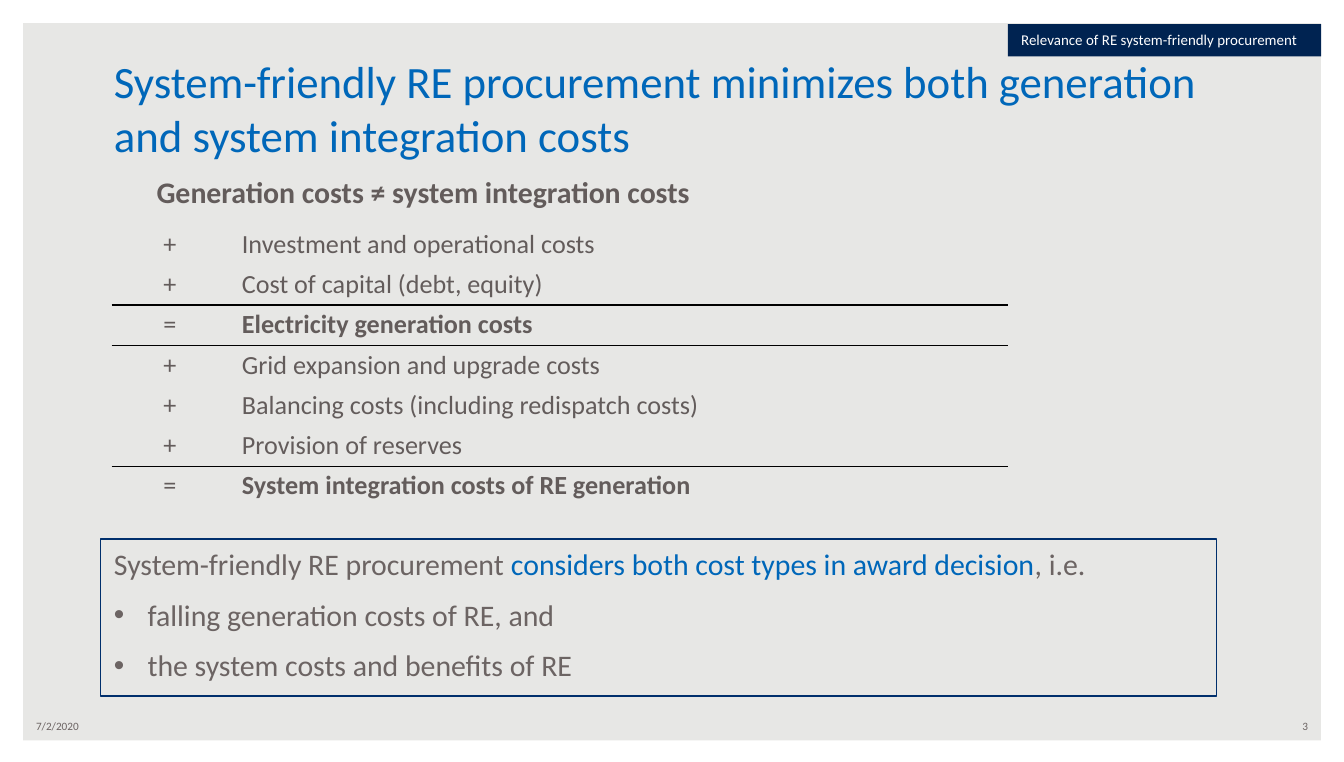
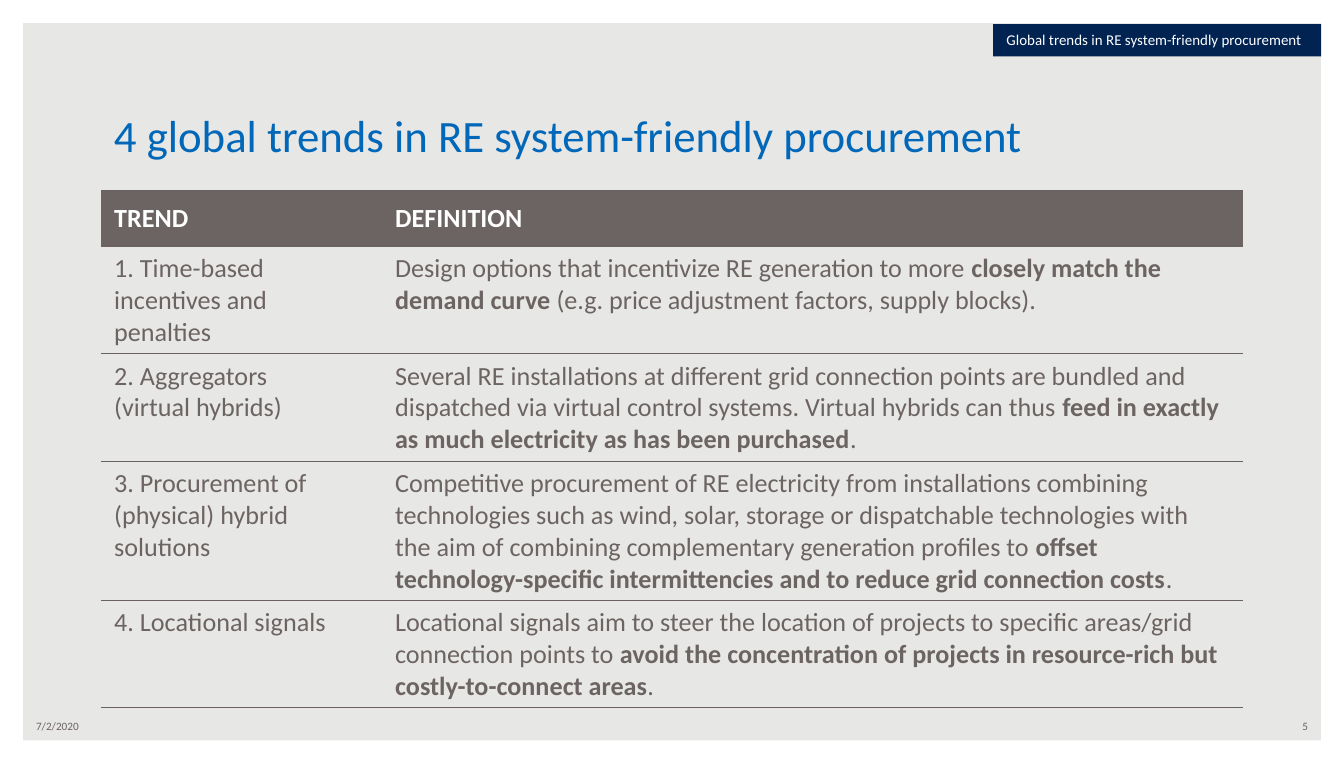
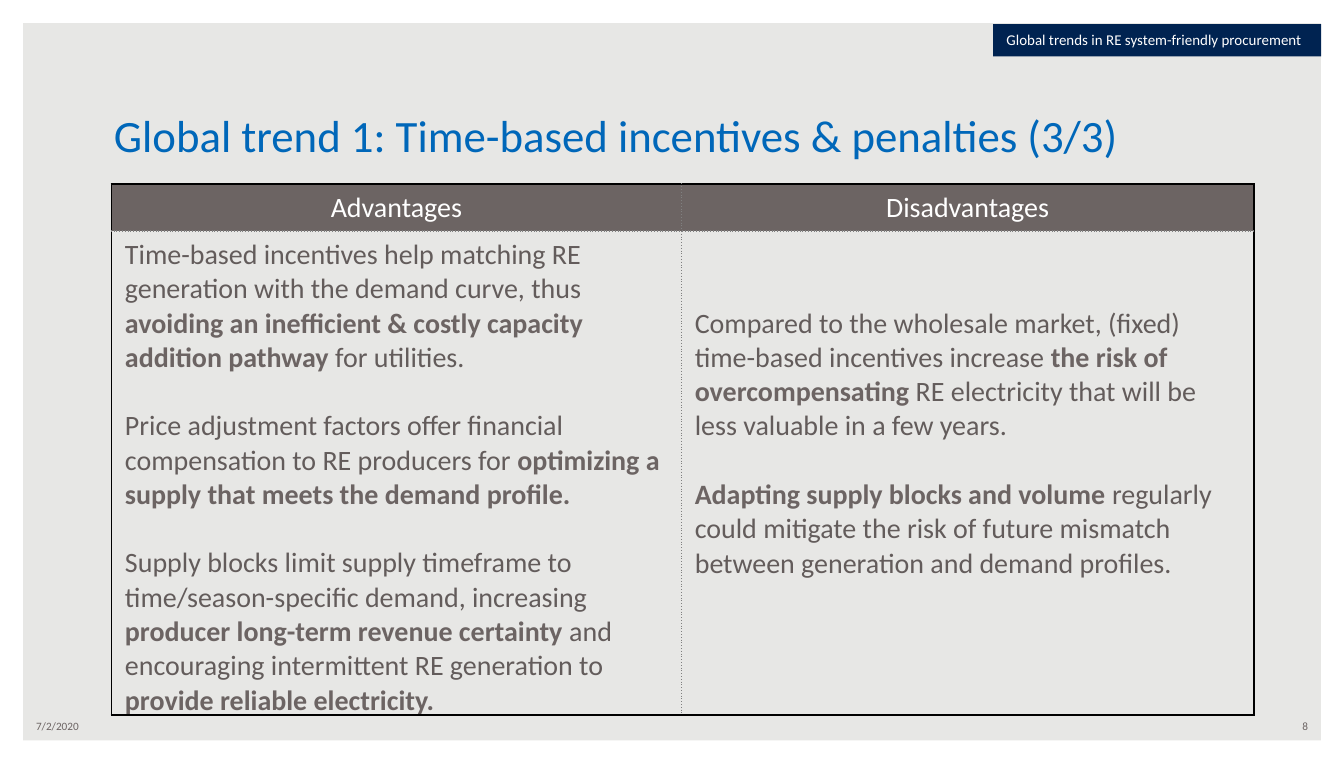
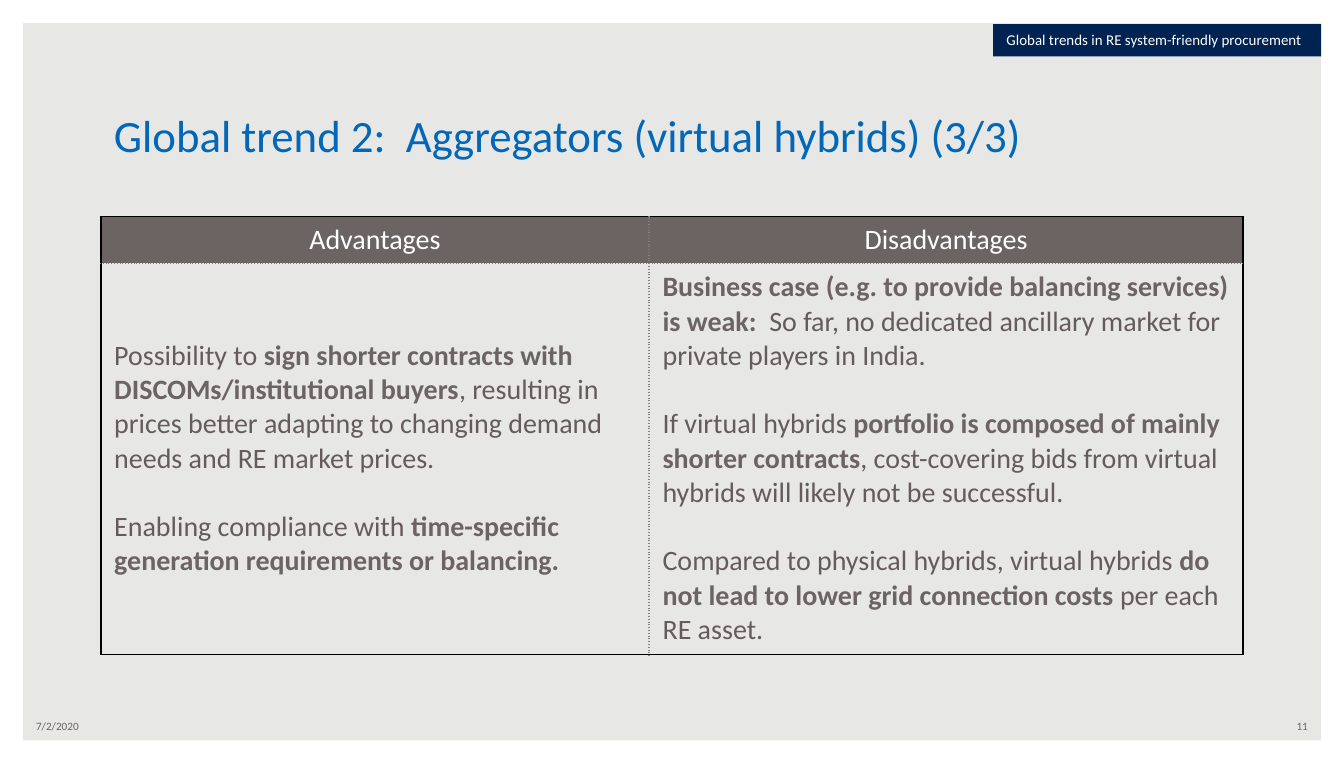
from lxml import etree
from pptx import Presentation
from pptx.dml.color import RGBColor
from pptx.enum import shapes, text
from pptx.oxml.ns import qn
from pptx.util import Inches, Pt

FONT = "Calibri"
PAPER = RGBColor(0xE7, 0xE7, 0xE5)
WHITE = RGBColor(0xFF, 0xFF, 0xFF)
BLACK = RGBColor(0, 0, 0)
BLUE = RGBColor(0x00, 0x67, 0xB9)
NAVY = RGBColor(0x00, 0x23, 0x51)
OUTLINE = RGBColor(0x00, 0x2F, 0x6C)
GREY = RGBColor(0x6C, 0x64, 0x63)
DARK = RGBColor(0x63, 0x5C, 0x5B)
RULE = RGBColor(0x6A, 0x62, 0x61)
DOTS = RGBColor(0x80, 0x80, 0x80)
NO_STYLE = "{2D5ABB26-0587-4C30-8999-92F81FD0307C}"
LEFT, CENTER, RIGHT = text.PP_ALIGN.LEFT, text.PP_ALIGN.CENTER, text.PP_ALIGN.RIGHT
TOP, MIDDLE, BOTTOM = text.MSO_ANCHOR.TOP, text.MSO_ANCHOR.MIDDLE, text.MSO_ANCHOR.BOTTOM

DATE = "7/2/2020"
RELEVANCE = ("Relevance of RE system-friendly procurement", 2.33)
TRENDS = ("Global trends in RE system-friendly procurement", 2.44)

COSTS_TITLE = "System-friendly RE procurement minimizes both generation and system integration costs"
COSTS_HEADING = "**Generation costs ≠ system integration costs**"
COSTS = [
    ("+", "Investment and operational costs"),
    ("+", "Cost of capital (debt, equity)"),
    ("=", "**Electricity generation costs**"),
    ("+", "Grid expansion and upgrade costs"),
    ("+", "Balancing costs (including redispatch costs)"),
    ("+", "Provision of reserves"),
    ("=", "**System integration costs of RE generation**"),
]
AWARD = "System-friendly RE procurement **considers both cost types in award decision**, i.e."
AWARD_POINTS = ["falling generation costs of RE, and", "the system costs and benefits of RE"]

DEFINITIONS_TITLE = "4 global trends in RE system-friendly procurement"
DEFINITIONS = [
    ("**TREND**", "**DEFINITION**"),
    ("1. Time-based incentives and penalties",
     "Design options that incentivize RE generation to more **closely match the demand curve "
     "**(e.g. price adjustment factors, supply blocks)."),
    ("2. Aggregators \n(virtual hybrids)",
     "Several RE installations at different grid connection points are bundled and dispatched "
     "via virtual control systems. Virtual hybrids can thus **feed in exactly as much "
     "electricity as has been purchased**."),
    ("3. Procurement of (physical) hybrid solutions",
     "Competitive procurement of RE electricity from installations combining technologies such "
     "as wind, solar, storage or dispatchable technologies with the aim of combining "
     "complementary generation profiles to **offset technology-specific intermittencies and to "
     "reduce grid connection costs**."),
    ("4. Locational signals",
     "Locational signals aim to steer the location of projects to specific areas/grid "
     "connection points to **avoid the concentration of projects in resource-rich but "
     "costly-to-connect areas**."),
]
DEFINITION_ROWS = [0.41, 0.8, 0.8, 1.03, 0.8]

PROS_CONS_HEADERS = ("Advantages", "Disadvantages")
PROS_CONS = [
    dict(number=8, title="Global trend 1: Time-based incentives & penalties (3/3)",
         left=0.83, top=1.37, cols=[4.24, 4.26], rows=[0.35, 3.6], inset_tops=[0.05, 0.56],
         lists=[
             ["Time-based incentives help matching RE generation with the demand curve, thus "
              "**avoiding an inefficient & costly capacity addition pathway **for utilities.",
              "Price adjustment factors offer financial compensation to RE producers for "
              "**optimizing a supply that meets the demand profile.**",
              "Supply blocks limit supply timeframe to time/season-specific demand, increasing "
              "**producer long-term revenue certainty **and encouraging intermittent RE "
              "generation to **provide reliable electricity.**"],
             ["Compared to the wholesale market, (fixed) time-based incentives increase **the "
              "risk of overcompensating **RE electricity that will be less valuable in a few "
              "years.",
              "**Adapting supply blocks and volume **regularly could mitigate the risk of future "
              "mismatch between generation and demand profiles."],
         ]),
    dict(number=11, title="Global trend 2:  Aggregators (virtual hybrids) (3/3)",
         left=0.75, top=1.61, cols=[4.08, 4.42], rows=[0.35, 2.91], inset_tops=[0.56, 0.05],
         lists=[
             ["Possibility to **sign shorter contracts with DISCOMs/institutional buyers**, "
              "resulting in prices better adapting to changing demand needs and RE market prices.",
              "Enabling compliance with **time-specific generation requirements or balancing.**"],
             ["**Business case (e.g. to provide balancing services) is weak:  **So far, no "
              "dedicated ancillary market for private players in India.",
              "If virtual hybrids **portfolio is composed of mainly shorter contracts**, "
              "cost-covering bids from virtual hybrids will likely not be successful.",
              "Compared to physical hybrids, virtual hybrids **do not lead to lower grid "
              "connection costs **per each RE asset."],
         ]),
]


def write(tf, paragraphs, size, color=GREY, strong=None, strong_bold=True, align=LEFT,
          before=0, after=0, line=None, bulleted_from=None):
    tf.word_wrap = True
    for i, content in enumerate(paragraphs):
        p = tf.paragraphs[0] if i == 0 else tf.add_paragraph()
        p.alignment = align
        p.space_before = Pt(before if i else 0)
        p.space_after = Pt(after)
        if line:
            p.line_spacing = Pt(line)
        if bulleted_from is not None and i >= bulleted_from:
            pPr = p._p.get_or_add_pPr()
            pPr.set("marL", str(Inches(0.25)))
            pPr.set("indent", str(-Inches(0.25)))
            etree.SubElement(pPr, qn("a:buFont"), typeface="Arial")
            etree.SubElement(pPr, qn("a:buChar"), char="•")
        for j, part in enumerate(content.split("**")):
            is_strong = j % 2 == 1
            for k, piece in enumerate(part.split("\n")):
                if k:
                    p.add_line_break()
                if not piece:
                    continue
                r = p.add_run()
                r.text = piece
                r.font.name = FONT
                r.font.size = Pt(size)
                r.font.bold = is_strong and strong_bold
                r.font.color.rgb = strong if is_strong and strong else color


def add_text(s, box, content, size, anchor=TOP, **fmt):
    tf = s.shapes.add_textbox(*map(Inches, box)).text_frame
    tf.vertical_anchor = anchor
    write(tf, [content], size, **fmt)


def add_box(s, kind, box, fill=None, line=None):
    sp = s.shapes.add_shape(kind, *map(Inches, box))
    sp.shadow.inherit = False
    if fill is None:
        sp.fill.background()
    else:
        sp.fill.solid()
        sp.fill.fore_color.rgb = fill
    if line is None:
        sp.line.fill.background()
    else:
        sp.line.color.rgb = line
        sp.line.width = Pt(0.75)
    sp.text_frame.vertical_anchor = TOP
    return sp


def add_slide(prs, title, number, tag):
    s = prs.slides.add_slide(prs.slide_layouts[6])
    s.background.fill.solid()
    s.background.fill.fore_color.rgb = PAPER
    frame = add_box(s, shapes.MSO_SHAPE.FRAME, (0, 0, 10, 5.68), fill=WHITE)
    frame.adjustments[0] = 0.03
    add_text(s, (0.17, 5.3, 2.33, 0.2), DATE, 6, anchor=MIDDLE)
    add_text(s, (7.5, 5.3, 2.33, 0.2), str(number), 6, anchor=MIDDLE, align=RIGHT)
    add_text(s, (0.75, 0.34, 8.5, 0.91), title, 24, anchor=BOTTOM, color=BLUE)
    label, width = tag
    sp = add_box(s, shapes.MSO_SHAPE.RECTANGLE, (9.83 - width, 0.18, width, 0.24), fill=NAVY)
    write(sp.text_frame, [label], 8, color=WHITE)
    return s


def add_table(s, left, top, cols, rows):
    table = s.shapes.add_table(len(rows), len(cols), Inches(left), Inches(top),
                               Inches(sum(cols)), Inches(sum(rows))).table
    table.first_row = table.horz_banding = False
    table._tbl.tblPr.find(qn("a:tableStyleId")).text = NO_STYLE
    for column, width in zip(table.columns, cols):
        column.width = Inches(width)
    for row, height in zip(table.rows, rows):
        row.height = Inches(height)
    return table


def fill_cell(cell, paragraphs, size, fill=None, anchor=TOP, borders=None, **fmt):
    write(cell.text_frame, paragraphs, size, **fmt)
    cell.vertical_anchor = anchor
    if fill is None:
        cell.fill.background()
    else:
        cell.fill.solid()
        cell.fill.fore_color.rgb = fill
    tcPr = cell._tc.get_or_add_tcPr()
    sides = [side for side in "LRTB" if side in (borders or {})]
    for i, side in enumerate(sides):
        color, width, dash = borders[side]
        ln = etree.Element(qn("a:ln" + side), w=str(Pt(width)))
        solid = etree.SubElement(ln, qn("a:solidFill"))
        etree.SubElement(solid, qn("a:srgbClr"), val=str(color))
        etree.SubElement(ln, qn("a:prstDash"), val=dash)
        tcPr.insert(i, ln)


def build_costs(prs):
    s = add_slide(prs, COSTS_TITLE, 3, RELEVANCE)
    sp = add_box(s, shapes.MSO_SHAPE.RECTANGLE, (0.75, 4.01, 8.3, 1.17), line=OUTLINE)
    write(sp.text_frame, [AWARD] + AWARD_POINTS, 16, strong=BLUE, strong_bold=False,
          after=8, bulleted_from=1)
    add_text(s, (0.17, 1.24, 5.96, 0.41), COSTS_HEADING, 16, color=DARK, align=CENTER)
    table = add_table(s, 0.83, 1.67, [0.87, 5.8], [0.3] * len(COSTS))
    rule = (BLACK, 1, "solid")
    for i, row in enumerate(COSTS):
        borders = {}
        if row[0] == "=":
            borders["T"] = rule
        if i + 1 < len(COSTS) and COSTS[i + 1][0] == "=":
            borders["B"] = rule
        for j, (content, align) in enumerate(zip(row, (CENTER, LEFT))):
            cell = table.cell(i, j)
            cell.margin_top = cell.margin_bottom = Inches(0.03)
            fill_cell(cell, [content], 14, color=DARK, align=align, line=16.5,
                      anchor=MIDDLE, borders=borders)


def build_definitions(prs):
    s = add_slide(prs, DEFINITIONS_TITLE, 5, TRENDS)
    table = add_table(s, 0.75, 1.42, [2.09, 6.41], DEFINITION_ROWS)
    rule = (RULE, 0.75, "solid")
    for i, row in enumerate(DEFINITIONS):
        header = i == 0
        for j, content in enumerate(row):
            fill_cell(table.cell(i, j), [content], 14, color=WHITE if header else GREY,
                      fill=GREY if header else None, anchor=MIDDLE if header else TOP,
                      borders={"T": rule, "B": rule})


def build_pros_cons(prs, number, title, left, top, cols, rows, inset_tops, lists):
    s = add_slide(prs, title, number, TRENDS)
    table = add_table(s, left, top, cols, rows)
    edge, dots = (BLACK, 1, "solid"), (DOTS, 1, "sysDot")
    for j, (header, points) in enumerate(zip(PROS_CONS_HEADERS, lists)):
        sides = {"L": dots if j else edge, "R": edge if j else dots}
        fill_cell(table.cell(0, j), [header], 15, color=WHITE, fill=GREY, align=CENTER,
                  borders={**sides, "T": edge, "B": dots})
        body = table.cell(1, j)
        body.margin_top = Inches(inset_tops[j])
        body.margin_bottom = 0
        fill_cell(body, points, 15, color=DARK, strong=GREY, before=18.3,
                  borders={**sides, "T": dots, "B": edge})


def main():
    prs = Presentation()
    prs.slide_width, prs.slide_height = Inches(10), Inches(5.67)
    build_costs(prs)
    build_definitions(prs)
    for trend in PROS_CONS:
        build_pros_cons(prs, **trend)
    prs.save("out.pptx")


if __name__ == "__main__":
    main()
